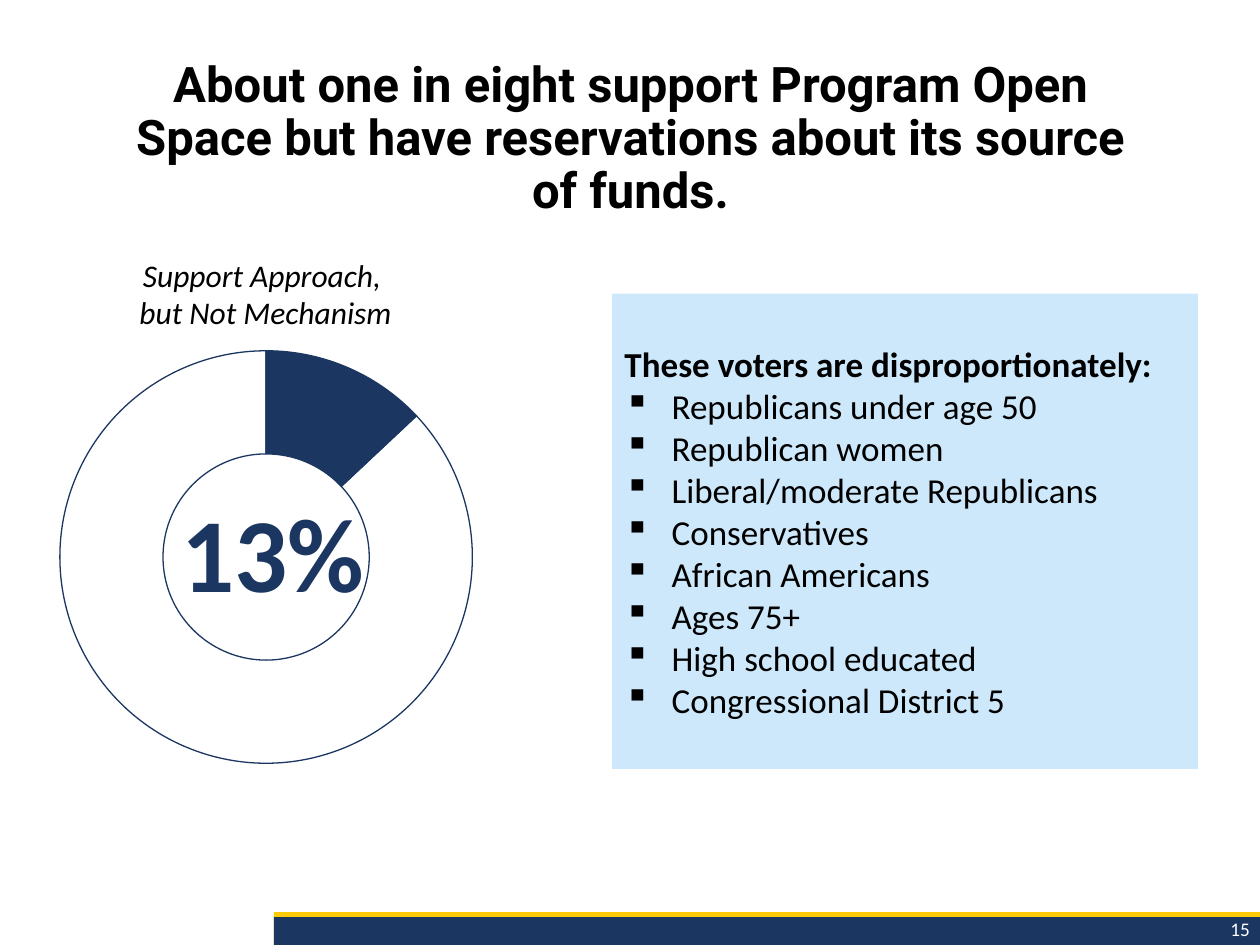
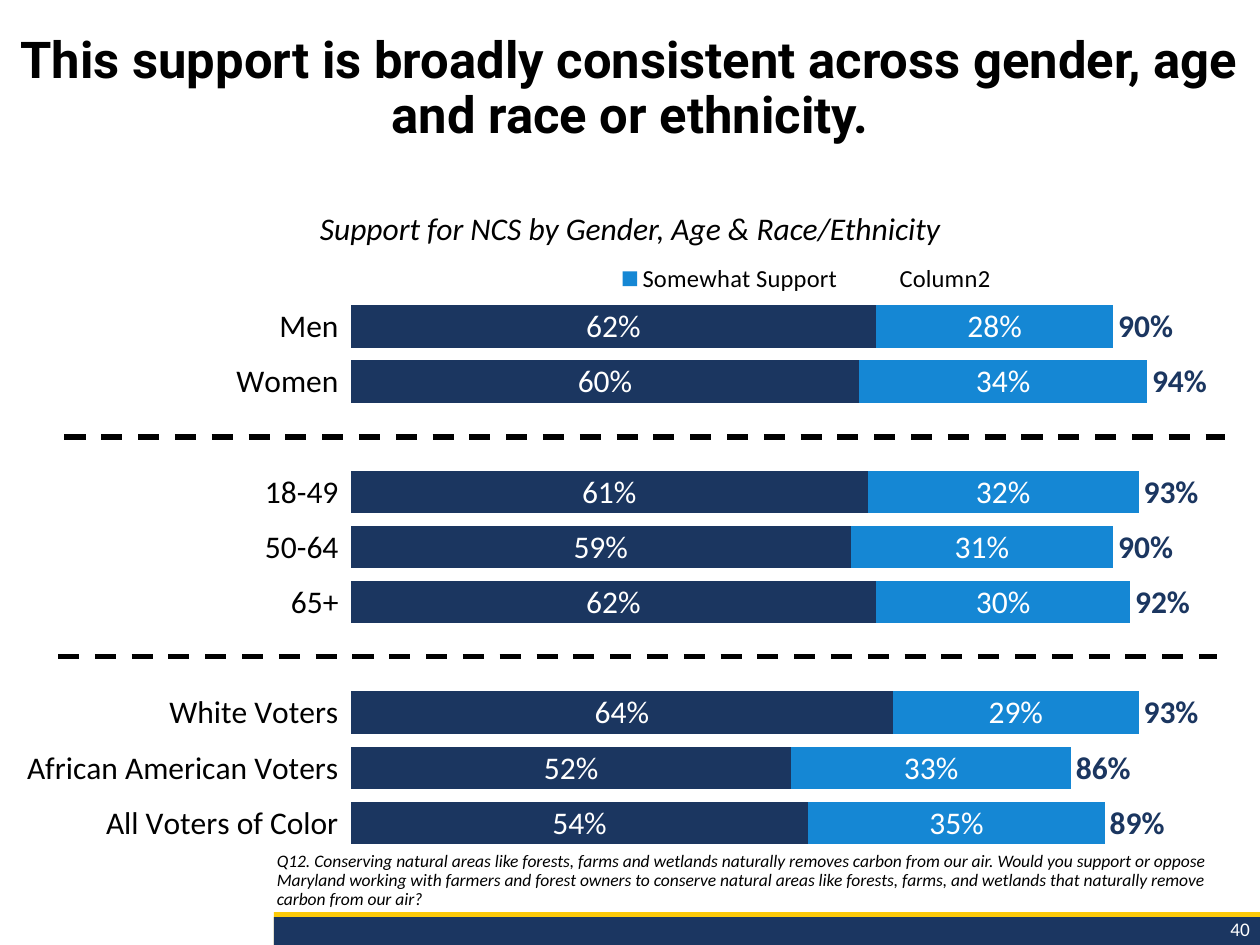
from lxml import etree
from pptx import Presentation
from pptx.chart.data import CategoryChartData
from pptx.dml.color import RGBColor
from pptx.enum.chart import XL_CHART_TYPE, XL_LABEL_POSITION, XL_LEGEND_POSITION, XL_TICK_LABEL_POSITION, XL_TICK_MARK
from pptx.enum.dml import MSO_LINE
from pptx.enum.shapes import MSO_CONNECTOR, MSO_SHAPE
from pptx.enum.text import MSO_ANCHOR, PP_ALIGN
from pptx.oxml.ns import qn
from pptx.util import Cm, Pt

RECT = MSO_SHAPE.RECTANGLE
LEFT, CENTER, RIGHT = PP_ALIGN.LEFT, PP_ALIGN.CENTER, PP_ALIGN.RIGHT
TOP, MIDDLE, BOTTOM = MSO_ANCHOR.TOP, MSO_ANCHOR.MIDDLE, MSO_ANCHOR.BOTTOM
LABEL_CENTER, LABEL_BASE = XL_LABEL_POSITION.CENTER, XL_LABEL_POSITION.INSIDE_BASE
NO_TICK = XL_TICK_MARK.NONE

NAVY, BAND_NAVY, GOLD = "1B3660", "1B3661", "FCCA09"
BLUE, PALE_BLUE = "1587D4", "CDE8FA"
BLACK, WHITE = "000000", "FFFFFF"
BODY_FONT, TITLE_FONT = "Calibri", "Roboto"


def rgb(color):
    return RGBColor.from_string(color)


def write(sp, lines, size, color=BLACK, font=BODY_FONT, bold=False, italic=False,
          align=LEFT, anchor=TOP, spacing=1.0, indent=0):
    tf = sp.text_frame
    tf.word_wrap = True
    tf.vertical_anchor = anchor
    for i, line in enumerate(lines):
        p = tf.paragraphs[0] if i == 0 else tf.add_paragraph()
        p.alignment = align
        p.line_spacing = spacing
        if indent:
            p._p.get_or_add_pPr().set("marL", str(Cm(indent)))
        r = p.add_run()
        r.text = line
        r.font.name = font
        r.font.size = Pt(size)
        r.font.bold = bold
        r.font.italic = italic
        r.font.color.rgb = rgb(color)


prs = Presentation()
prs.slide_width, prs.slide_height = Cm(25.4), Cm(19.05)

pages = [
    ("15", "About one in eight support Program Open Space but have reservations "
           "about its source of funds.", 28, (2.26, 1.09, 20.9, 3.1)),
    ("40", "This support is broadly consistent across gender, age and race or ethnicity.",
     29, (0, 0.58, 25.4, 3.1)),
]
for number, title, size, box in pages:
    s = prs.slides.add_slide(prs.slide_layouts[6])
    for color, top, height in [(GOLD, 18.39, 0.66), (BAND_NAVY, 18.49, 0.56)]:
        sp = s.shapes.add_shape(RECT, Cm(5.52), Cm(top), Cm(19.88), Cm(height))
        sp.shadow.inherit = False
        sp.fill.solid()
        sp.fill.fore_color.rgb = rgb(color)
        sp.line.fill.background()
    sp = s.shapes.add_textbox(Cm(21.69), Cm(18.36), Cm(3.76), Cm(0.69))
    write(sp, [number], 11, WHITE, align=RIGHT)
    sp = s.shapes.add_textbox(*map(Cm, box))
    write(sp, [title], size, font=TITLE_FONT, bold=True, align=CENTER, spacing=0.9)

s = prs.slides[0]
sp = s.shapes.add_textbox(Cm(0.81), Cm(5.03), Cm(8.79), Cm(1.8))
write(sp, ["Support Approach, ", "but Not Mechanism"], 18, italic=True, align=CENTER, indent=0.3)

data = CategoryChartData()
data.categories = ["1", ""]
data.add_series("Series 1", [13, 87])
ring = s.shapes.add_chart(XL_CHART_TYPE.DOUGHNUT, Cm(0.36), Cm(6.71), Cm(10.01), Cm(9.04), data).chart
ring.has_title = False
ring.has_legend = False
ring.font.name = BODY_FONT
ring.font.size = Pt(10)
ring.font.color.rgb = rgb(BLACK)
plot = ring.plots[0]
plot.vary_by_categories = False
plot.has_data_labels = False
for hole in ring._chartSpace.iter(qn("c:holeSize")):
    hole.set("val", "58")
for i in range(2):
    point = plot.series[0].points[i].format
    if i == 0:
        point.fill.solid()
        point.fill.fore_color.rgb = rgb(NAVY)
    else:
        point.fill.background()
    point.line.color.rgb = rgb(NAVY)
    point.line.width = Pt(0.75)

sp = s.shapes.add_textbox(Cm(3.02), Cm(9.88), Cm(4.65), Cm(2.74))
write(sp, ["13%"], 60, NAVY, bold=True, align=CENTER, anchor=MIDDLE, spacing=0.9, indent=0.3)

sp = s.shapes.add_shape(RECT, Cm(12.34), Cm(5.92), Cm(11.81), Cm(9.58))
sp.shadow.inherit = False
sp.fill.solid()
sp.fill.fore_color.rgb = rgb(PALE_BLUE)
sp.line.fill.background()
write(sp, ["These voters are disproportionately:", "Republicans under age 50", "Republican women",
           "Liberal/moderate Republicans", "Conservatives", "African Americans", "Ages 75+",
           "High school educated", "Congressional District 5"], 20, anchor=MIDDLE)
sp.text_frame.paragraphs[0].runs[0].font.bold = True
for p in sp.text_frame.paragraphs[1:]:
    pPr = p._p.get_or_add_pPr()
    pPr.set("marL", str(Cm(0.95)))
    pPr.set("indent", str(-Cm(0.95)))
    etree.SubElement(pPr, qn("a:buChar")).set("char", "▪")

s = prs.slides[1]
sp = s.shapes.add_textbox(Cm(5.33), Cm(17.09), Cm(19.96), Cm(1.37))
write(sp, ["Q12. Conserving natural areas like forests, farms and wetlands naturally removes carbon "
           "from our air. Would you support or oppose Maryland working with farmers and forest "
           "owners to conserve natural areas like forests, farms, and wetlands that naturally "
           "remove carbon from our air?"], 10, italic=True, anchor=BOTTOM, spacing=0.9)

support = [
    ("Strongly Support", [0.62, 0.6, None, 0.61, 0.59, 0.62, None, 0.64, 0.52, 0.54],
     NAVY, WHITE, LABEL_CENTER),
    ("Somewhat Support", [0.28, 0.34, None, 0.32, 0.31, 0.3, None, 0.29, 0.33, 0.35],
     BLUE, WHITE, LABEL_CENTER),
    ("Column2", [0.9, 0.94, None, 0.93, 0.9, 0.92, None, 0.93, 0.86, 0.89],
     None, NAVY, LABEL_BASE),
]
data = CategoryChartData(number_format="0%")
data.categories = ["Men", "Women", "", "18-49", "50-64", "65+", "",
                   "White Voters", "African American Voters", "All Voters of Color"]
for name, values, *_ in support:
    data.add_series(name, values)
bars = s.shapes.add_chart(XL_CHART_TYPE.BAR_STACKED, Cm(0.38), Cm(4.9), Cm(24.43), Cm(13.06), data).chart
bars.has_title = False
bars.font.name = BODY_FONT
bars.font.size = Pt(18)
bars.font.color.rgb = rgb(BLACK)
plot = bars.plots[0]
plot.vary_by_categories = False
plot.gap_width = 30
plot.overlap = 100
for series, (name, values, fill, label_color, position) in zip(plot.series, support):
    if fill:
        series.format.fill.solid()
        series.format.fill.fore_color.rgb = rgb(fill)
    else:
        series.format.fill.background()
    series.format.line.fill.background()
    labels = series.data_labels
    labels.show_value = True
    labels.position = position
    labels.number_format = "0%"
    labels.number_format_is_linked = False
    labels.font.name = BODY_FONT
    labels.font.size = Pt(18)
    labels.font.bold = fill is None
    labels.font.color.rgb = rgb(label_color)

axis = bars.category_axis
axis.reverse_order = True
axis.major_tick_mark = axis.minor_tick_mark = NO_TICK
axis.tick_label_position = XL_TICK_LABEL_POSITION.LOW
axis.tick_labels.font.size = Pt(18)
axis.format.line.fill.background()
axis = bars.value_axis
axis.minimum_scale, axis.maximum_scale, axis.major_unit = 0, 1, 0.2
axis.has_major_gridlines = False
axis.visible = False

bars.has_legend = True
legend = bars.legend
legend.position = XL_LEGEND_POSITION.TOP
legend.include_in_layout = False
legend.font.name = BODY_FONT
legend.font.size = Pt(14)
legend.font.color.rgb = rgb(BLACK)

layouts = [
    (ring, "c:plotArea", 0, (0.08, 0.04, 0.84, 0.92)),
    (bars, "c:plotArea", 0, (0.274, 0.086, 0.699, 0.852)),
    (bars, "c:legend", 1, (0.47, 0.02, 0.36, 0.07)),
]
for chart, tag, index, box in layouts:
    area = next(chart._chartSpace.iter(qn(tag)))
    for old in area.findall(qn("c:layout")):
        area.remove(old)
    layout = etree.Element(qn("c:layout"))
    manual = etree.SubElement(layout, qn("c:manualLayout"))
    if tag == "c:plotArea":
        etree.SubElement(manual, qn("c:layoutTarget")).set("val", "inner")
    for key in ("xMode", "yMode"):
        etree.SubElement(manual, qn("c:" + key)).set("val", "edge")
    for key, value in zip("xywh", box):
        etree.SubElement(manual, qn("c:" + key)).set("val", str(value))
    area.insert(index, layout)

entry = etree.Element(qn("c:legendEntry"))
etree.SubElement(entry, qn("c:idx")).set("val", "2")
etree.SubElement(entry, qn("c:delete")).set("val", "1")
area.insert(1, entry)

sp = s.shapes.add_textbox(Cm(3.51), Cm(4.09), Cm(18.39), Cm(1.02))
write(sp, ["Support for NCS by Gender, Age & Race/Ethnicity"], 18, italic=True, align=CENTER)

for left, right, y in [(1.3, 24.69, 8.81), (1.17, 24.54, 13.23)]:
    divider = s.shapes.add_connector(MSO_CONNECTOR.STRAIGHT, Cm(left), Cm(y), Cm(right), Cm(y))
    divider.line.color.rgb = rgb(BLACK)
    divider.line.width = Pt(3)
    divider.line.dash_style = MSO_LINE.DASH
    etree.SubElement(divider._element.spPr, qn("a:effectLst"))

prs.save("out.pptx")
